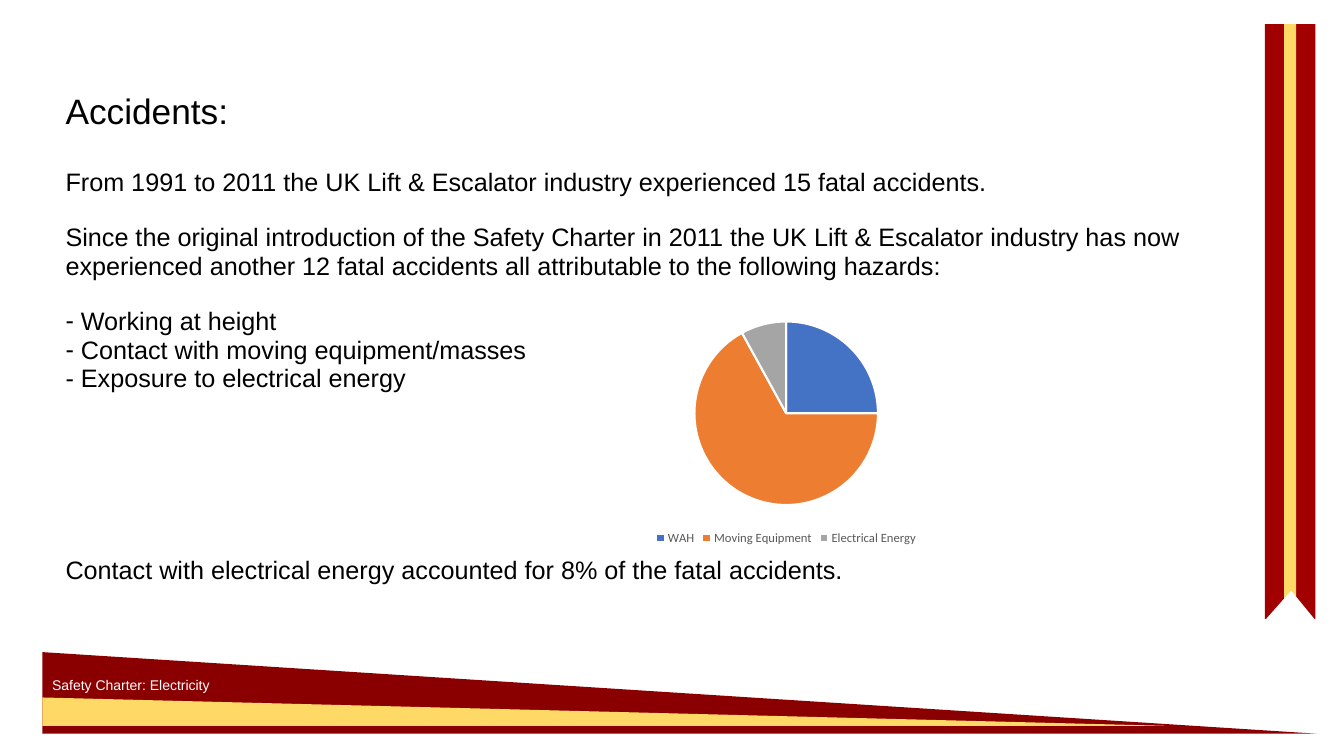
from pptx import Presentation
from pptx.chart.data import CategoryChartData
from pptx.dml.color import RGBColor
from pptx.enum.chart import XL_CHART_TYPE as ChartType, XL_LEGEND_POSITION as LegendPosition
from pptx.enum.shapes import MSO_SHAPE as Shape
from pptx.enum.text import MSO_ANCHOR as Anchor, MSO_AUTO_SIZE as AutoSize, PP_ALIGN as Align
from pptx.oxml import parse_xml
from pptx.oxml.ns import nsdecls
from pptx.util import Pt

BLACK = RGBColor(0x00, 0x00, 0x00)
WHITE = RGBColor(0xFF, 0xFF, 0xFF)
RED = RGBColor(0xA2, 0x00, 0x00)
DARK_RED = RGBColor(0x8A, 0x00, 0x00)
GOLD = RGBColor(0xFF, 0xD9, 0x66)
LEGEND_GREY = RGBColor(0x59, 0x59, 0x59)
SLICES = [("WAH", 25, RGBColor(0x44, 0x72, 0xC4)),
          ("Moving Equipment", 67, RGBColor(0xED, 0x7D, 0x31)),
          ("Electrical Energy", 8, RGBColor(0xA5, 0xA5, 0xA5))]

# Text, space before, dash bullet
BODY = [
    ("From 1991 to 2011 the UK Lift & Escalator industry experienced 15 fatal accidents.", 0, False),
    ("Since the original introduction of the Safety Charter in 2011 the UK Lift & Escalator "
     "industry has now experienced another 12 fatal accidents all attributable to the "
     "following hazards:", 19, False),
    ("Working at height", 19, True),
    ("Contact with moving equipment/masses", 0, True),
    ("Exposure to electrical energy", 0, True),
    ("Contact with electrical energy accounted for 8% of the fatal accidents.", 116.5, False),
]


def write(para, text, size=18, color=BLACK, before=0, spacing=0.95, bullet=None):
    """Fill a paragraph; bullet is None (leave), False (none) or True (dash)."""
    para.alignment = Align.LEFT
    para.line_spacing = spacing
    para.space_before = Pt(before)
    if bullet is not None:
        props = para._p.get_or_add_pPr()
        indent = Pt(11) if bullet else 0
        props.set("marL", str(indent))
        props.set("indent", str(-indent))
        mark = '<a:buChar {} char="-"/>' if bullet else "<a:buNone {}/>"
        props.append(parse_xml(mark.format(nsdecls("a"))))
    span = para.add_run()
    span.text = text
    span.font.name = "Arial"
    span.font.size = Pt(size)
    span.font.color.rgb = color


def place(item, left, top, width, height):
    item.left, item.top, item.width, item.height = Pt(left), Pt(top), Pt(width), Pt(height)
    frame = item.text_frame
    frame.word_wrap = True
    frame.auto_size = AutoSize.NONE
    frame.vertical_anchor = Anchor.TOP
    return frame


def add_block(page, kind, color, left, top, width, height, peak=None):
    block = page.shapes.add_shape(kind, Pt(left), Pt(top), Pt(width), Pt(height))
    block.shadow.inherit = False
    block.fill.solid()
    block.fill.fore_color.rgb = color
    block.line.fill.background()
    if peak is not None:
        block.adjustments[0] = peak


def add_ribbon(page, left, top, width, height):
    add_block(page, Shape.RECTANGLE, RED, left, top, width, height)
    add_block(page, Shape.RECTANGLE, GOLD, left + 13.7, top, 8.6, height - 3)
    # Notch at the foot
    add_block(page, Shape.ISOSCELES_TRIANGLE, WHITE, left - 20.2, top + height - 20.2,
              74.9, 43.9, peak=0.52)


def add_footer(page, left, top, width, height):
    add_block(page, Shape.ISOSCELES_TRIANGLE, DARK_RED, left, top, width, height, peak=0)
    add_block(page, Shape.ISOSCELES_TRIANGLE, GOLD, left, top + 32.4, width * 0.88, 20.2, peak=0)
    label = page.shapes.add_textbox(0, 0, 0, 0)
    frame = place(label, left, top + 13.7, 212.4, 19.4)
    write(frame.paragraphs[0], "Safety Charter: Electricity", size=10, color=WHITE, spacing=1)


def add_text(page, left, top, width, height):
    title, body = page.placeholders
    frame = place(title, left, top, width, 40)
    write(frame.paragraphs[0], "Accidents:", size=25.2)
    frame = place(body, left, top + 54.5, width, height - 54.5)
    for number, (text, before, bullet) in enumerate(BODY):
        para = frame.add_paragraph() if number else frame.paragraphs[0]
        write(para, text, before=before, bullet=bullet)


def add_pie(page, left, top, width, height):
    data = CategoryChartData()
    data.categories = [name for name, _, _ in SLICES]
    data.add_series("Series 1", [value for _, value, _ in SLICES])
    chart = page.shapes.add_chart(ChartType.PIE, Pt(left), Pt(top), Pt(width), Pt(height), data).chart
    chart.has_title = False
    chart.font.name = "Calibri"
    chart.font.size = Pt(10)
    chart.font.color.rgb = BLACK
    chart.has_legend = True
    chart.legend.position = LegendPosition.BOTTOM
    chart.legend.include_in_layout = False
    chart.legend.font.name = "Calibri"
    chart.legend.font.size = Pt(9)
    chart.legend.font.color.rgb = LEGEND_GREY
    plot = chart.plots[0]
    plot.vary_by_categories = True
    for number, (_, _, color) in enumerate(SLICES):
        piece = plot.series[0].points[number].format
        piece.fill.solid()
        piece.fill.fore_color.rgb = color
        piece.line.color.rgb = WHITE
        piece.line.width = Pt(1.5)

    # Fixed pie area
    area = chart._chartSpace.chart.plotArea
    for old in area.findall("{*}layout"):
        area.remove(old)
    area.insert(0, parse_xml(
        f'<c:layout {nsdecls("c")}><c:manualLayout><c:layoutTarget val="inner"/>'
        '<c:xMode val="edge"/><c:yMode val="edge"/><c:x val="0.28"/><c:y val="0.06"/>'
        '<c:w val="0.44"/><c:h val="0.76"/></c:manualLayout></c:layout>'))


def main():
    deck = Presentation()
    deck.slide_width, deck.slide_height = Pt(960), Pt(540)
    page = deck.slides.add_slide(deck.slide_layouts[1])
    add_ribbon(page, 903.6, 17.3, 36, 424.8)
    add_footer(page, 30.2, 465.8, 910.8, 58.3)
    add_text(page, 39.6, 62, 850, 370)
    add_pie(page, 412.6, 218.9, 298, 173.5)
    deck.save("out.pptx")


if __name__ == "__main__":
    main()
